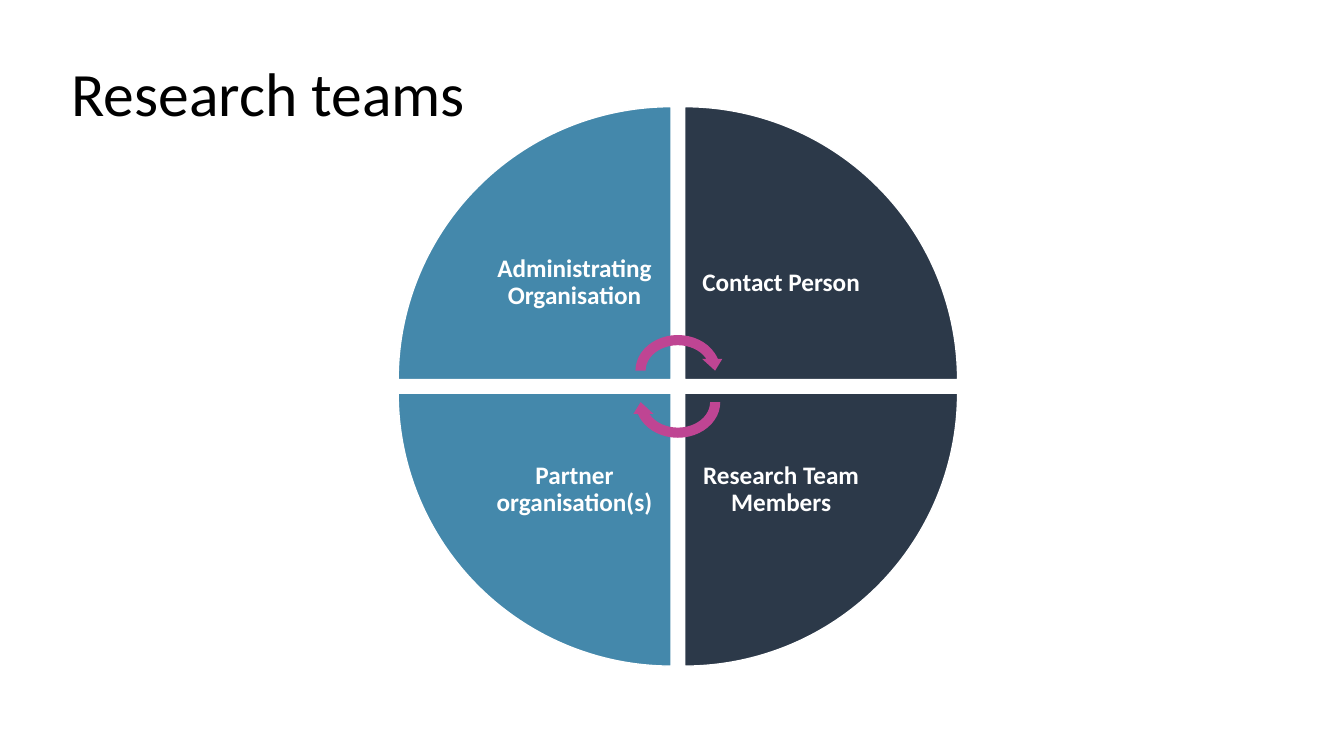
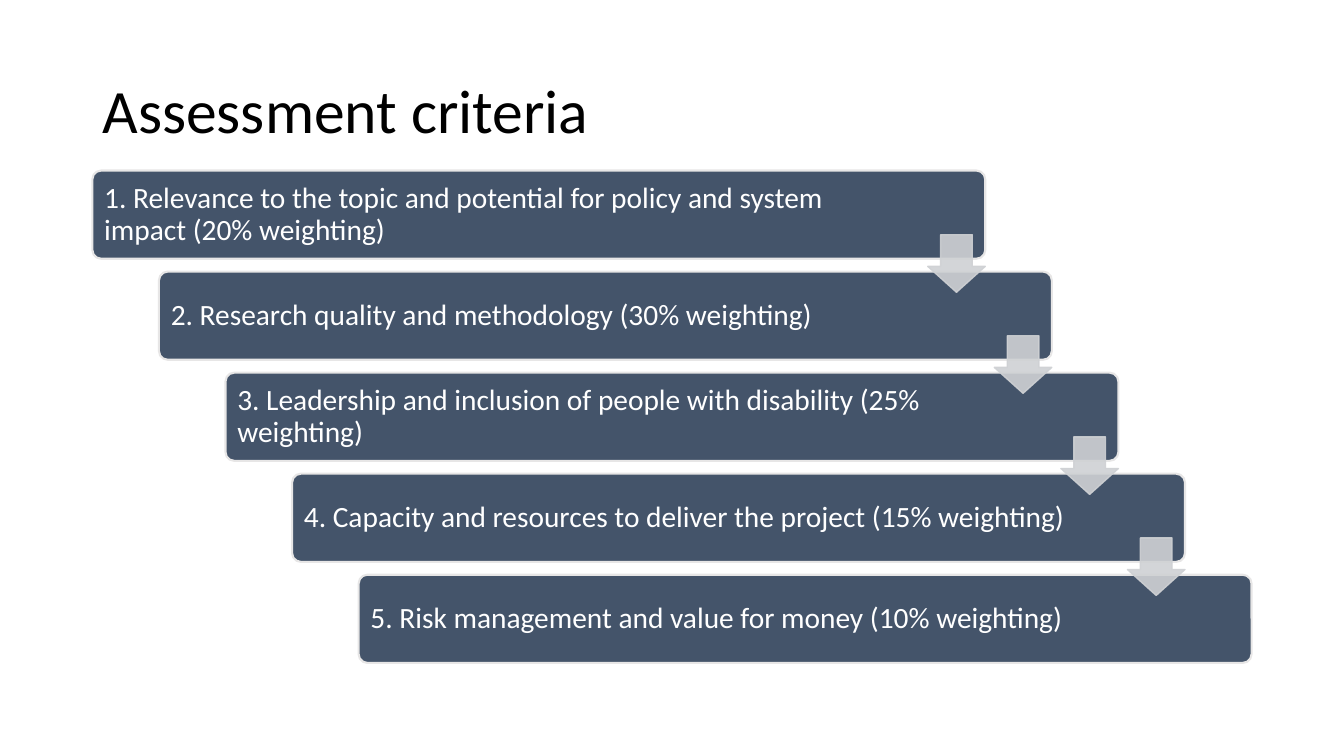
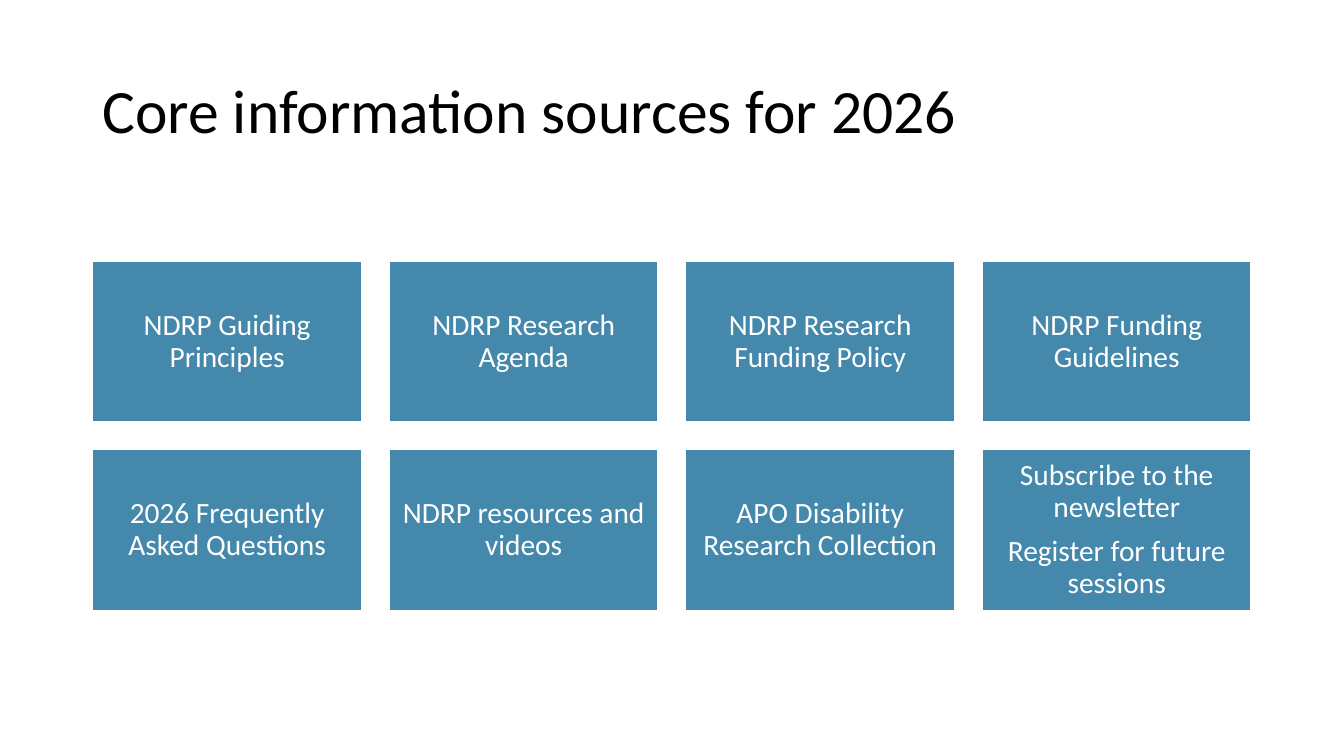
"""Build three slides on research teams, assessment criteria and information sources."""
from dataclasses import dataclass

from lxml.etree import SubElement
from pptx import Presentation
from pptx.dml.color import RGBColor
from pptx.enum.shapes import MSO_SHAPE
from pptx.enum.text import MSO_ANCHOR, MSO_AUTO_SIZE, PP_ALIGN
from pptx.oxml.ns import qn
from pptx.util import Inches, Pt

SLIDE_WIDTH, SLIDE_HEIGHT = Inches(13.333), Inches(7.5)
COLUMNS, ROWS = 160, 90
CONTENT_LEFT, CONTENT_WIDTH = 11, 138
FONT = "Calibri"
TEAL, NAVY, SLATE, PINK = "4488AB", "2C3949", "44546A", "BF4593"
WHITE, BLACK, PALE, SILVER = "FFFFFF", "000000", "E7E6E6", "CFD1D4"
TITLE_LAYOUT = 5


@dataclass(frozen=True)
class Box:
    """A rectangle in grid columns and rows."""

    left: float
    top: float
    width: float
    height: float

    def lengths(self) -> tuple[int, int, int, int]:
        """Return left, top, width and height in slide units."""
        return (across(self.left), down(self.top), across(self.width), down(self.height))


@dataclass(frozen=True)
class Quadrant:
    """A quarter of the team wheel."""

    text: str
    column: int
    row: int
    rotation: int
    color: str


TITLE_BOX = Box(CONTENT_LEFT, 4.8, CONTENT_WIDTH, 17.4)
WHEEL_TITLE_BOX = Box(7.3, 2.8, 94.7, 17.4)
QUADRANTS = [
    Quadrant("Administrating Organisation", 0, 0, 0, TEAL),
    Quadrant("Contact Person", 1, 0, 90, NAVY),
    Quadrant("Research Team Members", 1, 1, 180, NAVY),
    Quadrant("Partner organisation(s)", 0, 1, 270, TEAL),
]
CRITERIA = [
    "1. Relevance to the topic and potential for policy and system impact (20% weighting)",
    "2. Research quality and methodology (30% weighting)",
    "3. Leadership and inclusion of people with disability (25% weighting)",
    "4. Capacity and resources to deliver the project (15% weighting)",
    "5. Risk management and value for money (10% weighting)",
]
SOURCES = [
    "NDRP Guiding Principles",
    "NDRP Research Agenda",
    "NDRP Research Funding Policy",
    "NDRP Funding Guidelines",
    "2026 Frequently Asked Questions",
    "NDRP resources and videos",
    "APO Disability Research Collection",
    "Subscribe to the newsletter\nRegister for future sessions",
]


def across(columns: float) -> int:
    """Turn grid columns into a length."""
    return round(SLIDE_WIDTH * columns / COLUMNS)


def down(rows: float) -> int:
    """Turn grid rows into a length."""
    return round(SLIDE_HEIGHT * rows / ROWS)


def color_of(value: str) -> RGBColor:
    """Turn a hex string into a colour."""
    return RGBColor.from_string(value)


def write_text(shape, text: str, *, size: float, color: str = WHITE, bold: bool = False,
               align=PP_ALIGN.CENTER, inset: float = 1.1, right_inset: float | None = None) -> None:
    """Fill a shape with formatted paragraphs, one for each line of text."""
    frame = shape.text_frame
    frame.word_wrap = True
    frame.auto_size = MSO_AUTO_SIZE.NONE
    frame.vertical_anchor = MSO_ANCHOR.MIDDLE
    frame.margin_left = across(inset)
    frame.margin_right = across(inset if right_inset is None else right_inset)
    frame.margin_top = frame.margin_bottom = down(inset)
    frame.text = text
    for index, paragraph in enumerate(frame.paragraphs):
        paragraph.alignment = align
        paragraph.line_spacing = 0.9
        paragraph.space_before = Pt(9 if index else 0)
        for run in paragraph.runs:
            run.font.name = FONT
            run.font.size = Pt(size)
            run.font.bold = bold
            run.font.color.rgb = color_of(color)


def add_figure(slide, preset: MSO_SHAPE, box: Box, fill: str, *, line: str | None = None,
               line_width: float = 1, rotation: int = 0, adjustments: tuple[float, ...] = (),
               opacity: int = 100):
    """Draw a preset shape without shadow."""
    shape = slide.shapes.add_shape(preset, *box.lengths())
    shape.shadow.inherit = False
    shape.rotation = rotation
    for index, value in enumerate(adjustments):
        shape.adjustments[index] = value
    shape.fill.solid()
    shape.fill.fore_color.rgb = color_of(fill)
    if line:
        shape.line.color.rgb = color_of(line)
        shape.line.width = Pt(line_width)
    else:
        shape.line.fill.background()
    if opacity < 100:
        for color in shape._element.spPr.iter(qn("a:srgbClr")):
            SubElement(color, qn("a:alpha")).set("val", str(opacity * 1000))
    return shape


def add_titled_slide(presentation, title: str, box: Box = TITLE_BOX):
    """Add a slide with its title in the shared style."""
    slide = presentation.slides.add_slide(presentation.slide_layouts[TITLE_LAYOUT])
    shape = slide.shapes.title
    shape.left, shape.top, shape.width, shape.height = box.lengths()
    write_text(shape, title, size=44, color=BLACK, align=PP_ALIGN.LEFT, inset=1.2)
    return slide


def build_teams(presentation) -> None:
    """Draw the wheel of four quarters with two circling arrows."""
    slide = add_titled_slide(presentation, "Research teams", WHEEL_TITLE_BOX)
    center_column, center_row, half_gap = 80.7, 46, 0.8
    wedge, label = 32.5, 23

    def quarter_box(quadrant: Quadrant, size: float) -> Box:
        """Place a square against the inner corner of its quarter."""
        left = center_column + (half_gap if quadrant.column else -half_gap - size)
        top = center_row + (half_gap if quadrant.row else -half_gap - size)
        return Box(left, top, size, size)

    for quadrant in QUADRANTS:
        add_figure(slide, MSO_SHAPE.PIE_WEDGE, quarter_box(quadrant, wedge), quadrant.color,
                   line=WHITE, rotation=quadrant.rotation)
        text_box = slide.shapes.add_textbox(*quarter_box(quadrant, label).lengths())
        write_text(text_box, quadrant.text, size=18, bold=True, inset=1.7)
    arrow_width, arrow_height, arrow_shift = 11.3, 9.7, 1.87
    for rotation, shift in ((0, -arrow_shift), (180, arrow_shift)):
        box = Box(center_column - arrow_width / 2, center_row + shift - arrow_height / 2,
                  arrow_width, arrow_height)
        add_figure(slide, MSO_SHAPE.CIRCULAR_ARROW, box, PINK, rotation=rotation)


def build_criteria(presentation) -> None:
    """Draw the staircase of criteria joined by arrows."""
    slide = add_titled_slide(presentation, "Assessment criteria")
    width, height, first_top, step_down = 106.3, 10.5, 20.3, 12.03
    step_across = (CONTENT_WIDTH - width) / (len(CRITERIA) - 1)
    bars = [Box(CONTENT_LEFT + index * step_across, first_top + index * step_down, width, height)
            for index in range(len(CRITERIA))]
    for bar, criterion in zip(bars, CRITERIA):
        shape = add_figure(slide, MSO_SHAPE.ROUNDED_RECTANGLE, bar, SLATE, line=PALE,
                           line_width=1.5, adjustments=(0.1,))
        write_text(shape, criterion, size=21, align=PP_ALIGN.LEFT, right_inset=14)
    arrow = 6.85
    for bar in bars[:-1]:
        box = Box(bar.left + bar.width - arrow, bar.top + 7.65, arrow, arrow)
        add_figure(slide, MSO_SHAPE.DOWN_ARROW, box, SILVER, line=SILVER,
                   adjustments=(0.55, 0.45), opacity=90)


def build_sources(presentation) -> None:
    """Draw the grid of information sources."""
    slide = add_titled_slide(presentation, "Core information sources for 2026")
    per_row, gap, first_top, height = 4, 3.2, 31.1, 19.2
    width = (CONTENT_WIDTH - (per_row - 1) * gap) / per_row
    for index, source in enumerate(SOURCES):
        row, column = divmod(index, per_row)
        box = Box(CONTENT_LEFT + column * (width + gap), first_top + row * (height + gap),
                  width, height)
        shape = add_figure(slide, MSO_SHAPE.RECTANGLE, box, TEAL, line=WHITE, line_width=1.5)
        write_text(shape, source, size=21)


def main() -> None:
    """Build and save the presentation."""
    presentation = Presentation()
    presentation.slide_width, presentation.slide_height = SLIDE_WIDTH, SLIDE_HEIGHT
    build_teams(presentation)
    build_criteria(presentation)
    build_sources(presentation)
    presentation.save("out.pptx")


if __name__ == "__main__":
    main()
